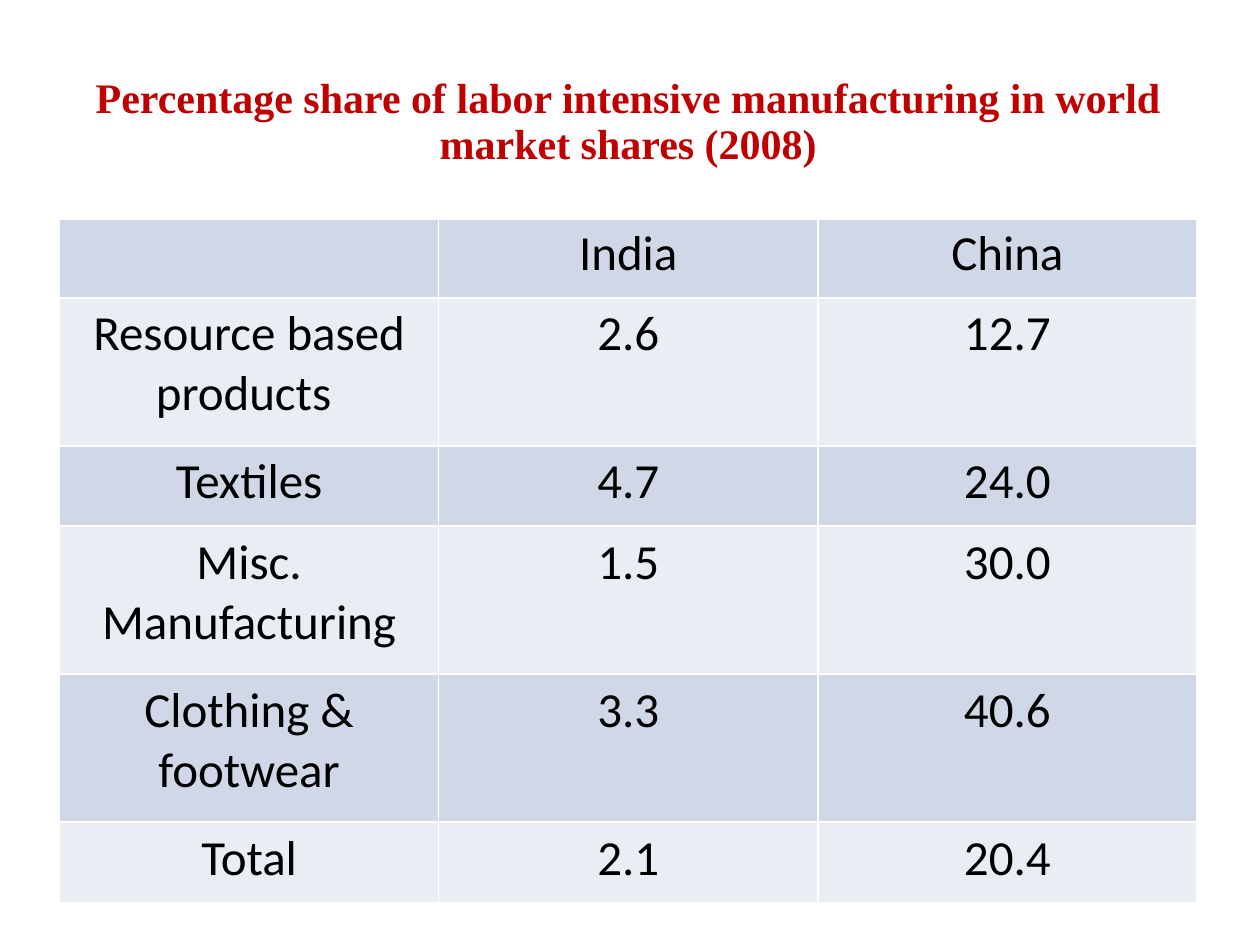
from lxml import etree
from pptx import Presentation
from pptx.dml.color import RGBColor
from pptx.enum import text
from pptx.oxml import ns
from pptx.util import Cm, Pt

TITLE = "Percentage share of labor intensive manufacturing in world market shares (2008)"
ROWS = [
    ("", "India", "China"),
    ("Resource based products ", "2.6", "12.7"),
    ("Textiles", "4.7", "24.0"),
    ("Misc.\nManufacturing", "1.5", "30.0"),
    ("Clothing & footwear", "3.3", "40.6"),
    ("Total", "2.1", "20.4"),
]
TALL, SHORT = 2.98, 1.62
HEIGHTS = [TALL, SHORT, TALL, SHORT, TALL, TALL, SHORT]
BANDS = ["D0D8E8", "E9EDF4"]


def color(value):
    return RGBColor.from_string(value)


def add_border(cell, side, width):
    tc_pr = cell._tc.get_or_add_tcPr()
    line = etree.SubElement(tc_pr, ns.qn(f"a:{side}"), w=str(Pt(width)))
    fill = etree.SubElement(line, ns.qn("a:solidFill"))
    etree.SubElement(fill, ns.qn("a:srgbClr"), val="FFFFFF")


def style_cell(cell, fill, bottom=1):
    for side, width in (("lnL", 1), ("lnR", 1), ("lnT", 1), ("lnB", bottom)):
        add_border(cell, side, width)
    cell.fill.solid()
    cell.fill.fore_color.rgb = color(fill)


def write_cell(cell, content, font, size, ink, bold=False):
    tf = cell.text_frame
    for i, line in enumerate(content.split("\n")):
        p = tf.add_paragraph() if i else tf.paragraphs[0]
        p.alignment = text.PP_ALIGN.CENTER
        if line:
            r = p.add_run()
            r.text = line
            r.font.name = font
            r.font.size = Pt(size)
            r.font.bold = bold
            r.font.color.rgb = color(ink)


def add_share_table(slide, left, top, width, height):
    table = slide.shapes.add_table(
        len(HEIGHTS), 3, Cm(left), Cm(top), Cm(width), Cm(height)
    ).table
    for column in table.columns:
        column.width = Cm(width / 3)
    for row, row_height in zip(table.rows, HEIGHTS):
        row.height = Cm(row_height * height / sum(HEIGHTS))

    title = table.cell(0, 0)
    title.merge(table.cell(0, 2))
    write_cell(title, TITLE, "Times New Roman", 24, "C00000", True)
    for cell in table.rows[0].cells:
        style_cell(cell, "FFFFFF", 3)

    for i, values in enumerate(ROWS):
        for cell, value in zip(table.rows[i + 1].cells, values):
            write_cell(cell, value, "Calibri", 28, "000000", False)
            style_cell(cell, BANDS[i % 2])


def main():
    prs = Presentation()
    prs.slide_width, prs.slide_height = Cm(25.4), Cm(19.05)
    slide = prs.slides.add_slide(prs.slide_layouts[6])
    add_share_table(slide, 1.2, 1.4, 22.93, 16.8)
    prs.save("out.pptx")


if __name__ == "__main__":
    main()
